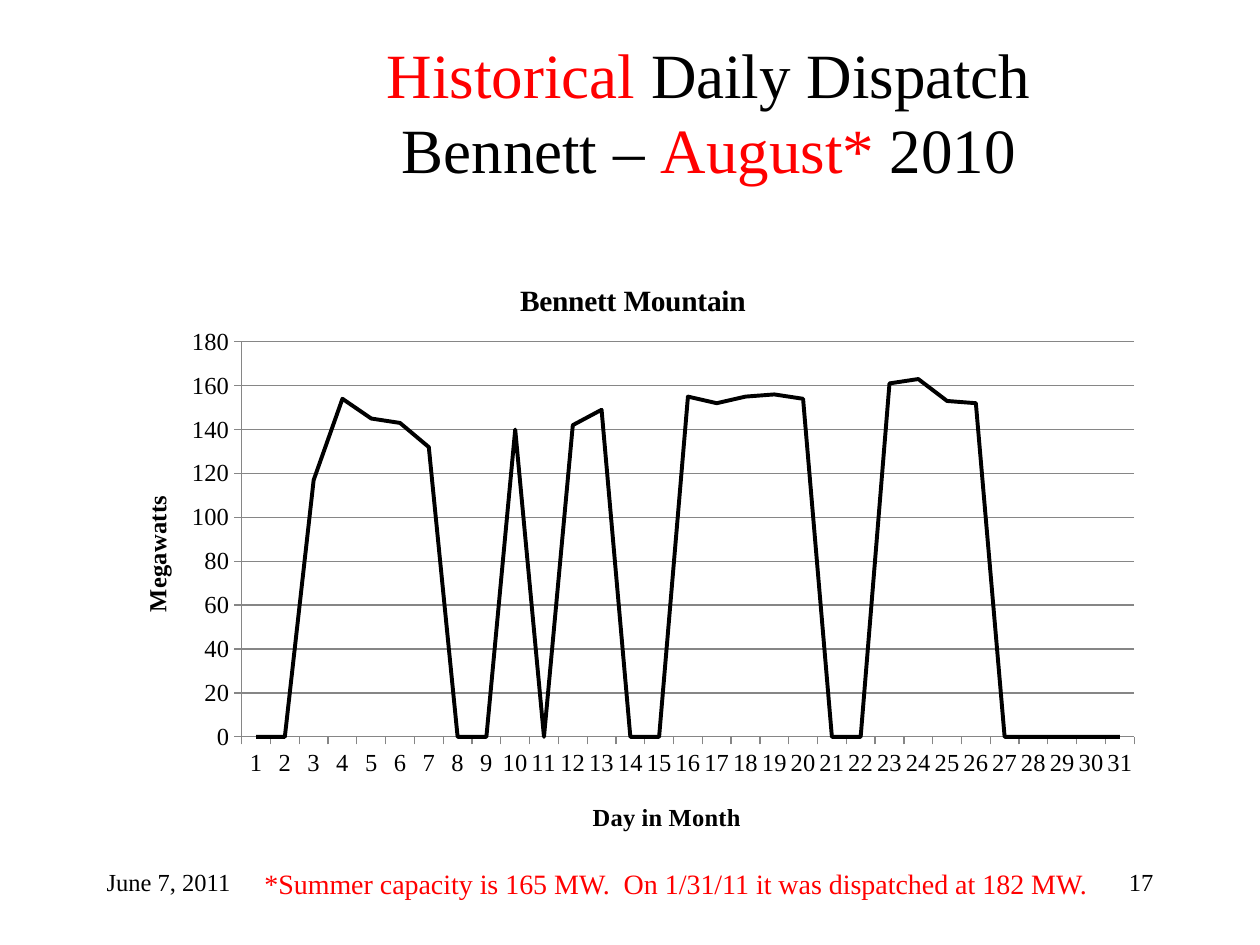
from dataclasses import dataclass

from lxml import etree
from pptx import Presentation
from pptx import util as u
from pptx.chart.data import CategoryChartData
from pptx.dml.color import RGBColor
from pptx.enum import chart as ch
from pptx.enum import text
from pptx.oxml.ns import qn


@dataclass(frozen=True)
class Theme:
    font: str = "Times New Roman"
    ink: RGBColor = RGBColor(0, 0, 0)
    accent: RGBColor = RGBColor(0xFF, 0, 0)
    rule: RGBColor = RGBColor(0x86, 0x86, 0x86)
    title: float = 36
    note: float = 16
    small: float = 14
    chart_title: float = 16.8


@dataclass(frozen=True)
class Label:
    text: str
    left: float
    width: float
    height: float
    size: float
    color: RGBColor
    align: text.PP_ALIGN = text.PP_ALIGN.LEFT
    wrap: bool = True


T = Theme()
FOOT_TOP = 17.35
MEGAWATTS = [0, 0, 117, 154, 145, 143, 132, 0, 0, 140, 0, 142, 149, 0, 0, 155,
             152, 155, 156, 154, 0, 0, 161, 163, 153, 152, 0, 0, 0, 0, 0]
LABELS = [
    Label("June 7, 2011", 1.9, 5.3, 1.27, T.small, T.ink),
    Label("17", 18.2, 5.3, 1.27, T.small, T.ink, text.PP_ALIGN.RIGHT),
    Label("*Summer capacity is 165 MW.  On 1/31/11 it was dispatched at 182 MW.",
          5.08, 17.78, 0.94, T.note, T.accent),
]


def style(font, size: float, color: RGBColor, bold: bool = False) -> None:
    font.name, font.size, font.bold = T.font, u.Pt(size), bold
    font.color.rgb = color


def add_run(p, words: str, size: float, color: RGBColor) -> None:
    r = p.add_run()
    r.text = words
    style(r.font, size, color)


def add_label(s, label: Label) -> None:
    sp = s.shapes.add_textbox(u.Cm(label.left), u.Cm(FOOT_TOP),
                              u.Cm(label.width), u.Cm(label.height))
    tf = sp.text_frame
    tf.word_wrap = label.wrap
    p = tf.paragraphs[0]
    p.alignment = label.align
    add_run(p, label.text, label.size, label.color)


def fill_title(s) -> None:
    sp = s.shapes.title
    sp.left, sp.top, sp.width, sp.height = map(u.Cm, (6.35, 0.64, 15.88, 3.18))
    tf = sp.text_frame
    tf.word_wrap, tf.auto_size = True, text.MSO_AUTO_SIZE.NONE
    tf.vertical_anchor = text.MSO_ANCHOR.MIDDLE
    p = tf.paragraphs[0]
    p.alignment = text.PP_ALIGN.CENTER
    add_run(p, "Historical", T.title, T.accent)
    add_run(p, " Daily Dispatch", T.title, T.ink)
    p.add_line_break()
    add_run(p, "Bennett – ", T.title, T.ink)
    add_run(p, "August*", T.title, T.accent)
    add_run(p, " 2010", T.title, T.ink)


def place(element, **fractions: float) -> None:
    """Fix a chart part at fractions of the chart's width and height."""
    for old in element.findall(qn("c:layout")):
        element.remove(old)
    layout = etree.Element(qn("c:layout"))
    manual = etree.SubElement(layout, qn("c:manualLayout"))
    values = {"xMode": "edge", "yMode": "edge", **fractions}
    if "w" in fractions:
        etree.SubElement(manual, qn("c:layoutTarget")).set("val", "inner")
    for tag, value in values.items():
        etree.SubElement(manual, qn(f"c:{tag}")).set("val", str(value))
    tx = element.find(qn("c:tx"))
    element.insert(0 if tx is None else element.index(tx) + 1, layout)


def set_heading(heading, words: str, size: float, x: float, y: float) -> None:
    p = heading.text_frame.paragraphs[0]
    r = p.add_run()
    r.text = words
    style(r.font, size, T.ink, bold=True)
    place(heading._element, x=x, y=y)


def draw_rule(line) -> None:
    line.color.rgb, line.width = T.rule, u.Pt(0.75)


def add_dispatch_chart(s) -> None:
    data = CategoryChartData(number_format="0")
    data.categories = [str(day) for day in range(1, len(MEGAWATTS) + 1)]
    data.add_series("Series 1", MEGAWATTS)
    chart = s.shapes.add_chart(ch.XL_CHART_TYPE.LINE, u.Cm(2.12), u.Cm(5.08),
                               u.Cm(21.17), u.Cm(12.07), data).chart
    style(chart.font, T.small, T.ink)
    chart.has_legend = False
    chart.has_title = True
    set_heading(chart.chart_title, "Bennett Mountain", T.chart_title, 0.39, 0.04)

    days, power = chart.category_axis, chart.value_axis
    set_heading(days.axis_title, "Day in Month", T.small, 0.46, 0.91)
    set_heading(power.axis_title, "Megawatts", T.small, 0.03, 0.4)
    for axis in (days, power):
        axis.major_tick_mark = ch.XL_TICK_MARK.OUTSIDE
        draw_rule(axis.format.line)
    power.minimum_scale, power.maximum_scale, power.major_unit = 0, 180, 20
    power.has_major_gridlines = True
    draw_rule(power.major_gridlines.format.line)
    power.tick_labels.number_format = "0"
    power.tick_labels.number_format_is_linked = False

    plot = chart.plots[0]
    plot.vary_by_categories = False
    series = plot.series[0]
    series.smooth = False
    series.marker.style = ch.XL_MARKER_STYLE.NONE
    series.format.line.color.rgb = T.ink
    series.format.line.width = u.Pt(2.25)
    place(chart._chartSpace.find(".//" + qn("c:plotArea")),
          x=0.13, y=0.15, w=0.85, h=0.66)


def main() -> None:
    prs = Presentation()
    prs.slide_width, prs.slide_height = u.Cm(25.4), u.Cm(19.05)
    s = prs.slides.add_slide(prs.slide_layouts[5])
    fill_title(s)
    add_dispatch_chart(s)
    for label in LABELS:
        add_label(s, label)
    prs.save("out.pptx")


if __name__ == "__main__":
    main()
